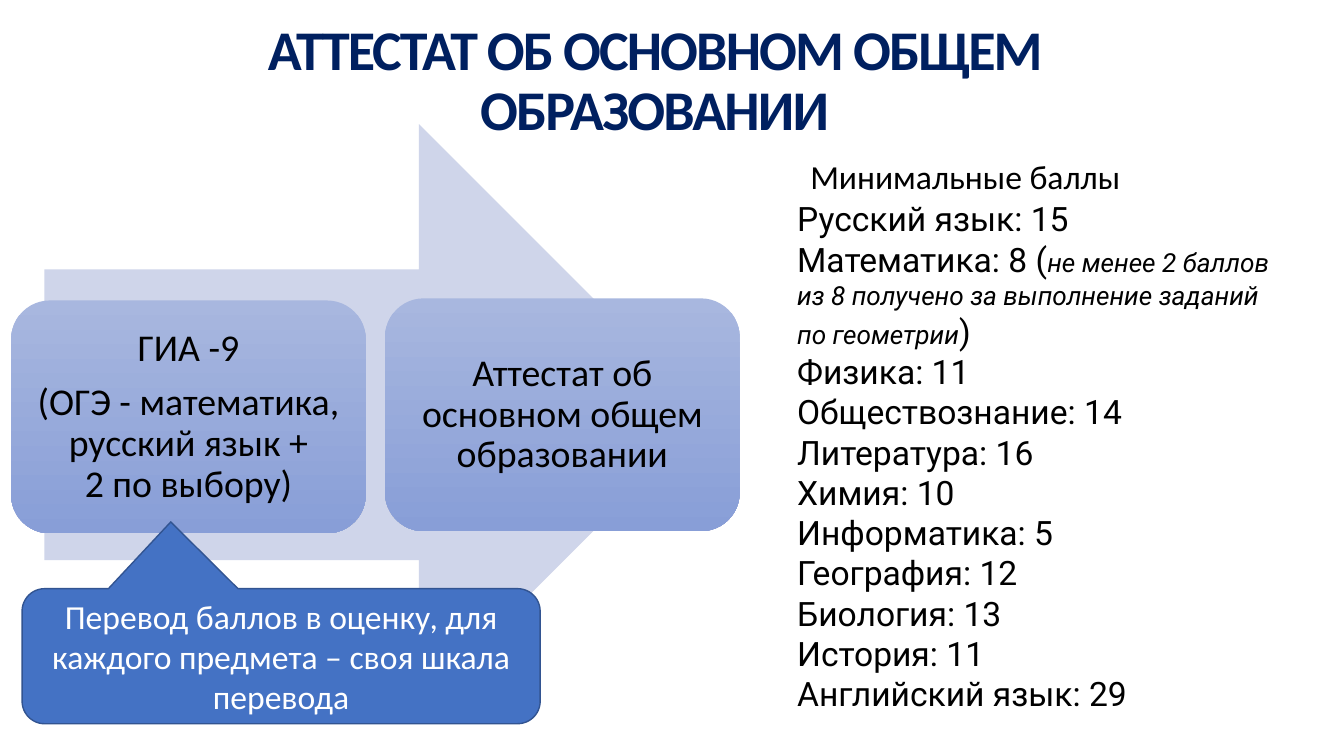
from dataclasses import dataclass

from pptx import Presentation
from pptx.dml.color import RGBColor
from pptx.enum.shapes import MSO_SHAPE
from pptx.enum.text import MSO_ANCHOR, PP_ALIGN
from pptx.shapes.autoshape import Shape
from pptx.slide import Slide
from pptx.text.text import TextFrame, _Paragraph
from pptx.util import Pt

NAVY, BLACK, WHITE = "002060", "000000", "FFFFFF"
ARROW_FILL, CALLOUT_FILL, CALLOUT_LINE = "CFD5EA", "4472C4", "325491"
STEP_TOP, STEP_BOTTOM = "A8B7DF", "889ED7"


@dataclass
class Box:
    left: float
    top: float
    width: float
    height: float

    def lengths(self) -> list[Pt]:
        return [Pt(n) for n in (self.left, self.top, self.width, self.height)]


@dataclass
class Step:
    box: Box
    paragraphs: list[str]


@dataclass
class Score:
    subject: str
    points: int
    note: str = ""


STEPS = [
    Step(Box(7.9, 214.6, 253.4, 166.3),
         ["ГИА -9", "(ОГЭ - математика, русский язык +\n2 по выбору)"]),
    Step(Box(275, 213.1, 253.4, 166.3),
         ["Аттестат об основном общем образовании"]),
]
SCORES = [
    Score("Русский язык", 15),
    Score("Математика", 8, "не\u00a0менее 2 баллов из\u00a08 получено "
          "за\u00a0выполнение заданий по\u00a0геометрии"),
    Score("Физика", 11),
    Score("Обществознание", 14),
    Score("Литература", 16),
    Score("Химия", 10),
    Score("Информатика", 5),
    Score("География", 12),
    Score("Биология", 13),
    Score("История", 11),
    Score("Английский язык", 29),
]


def color(value: str) -> RGBColor:
    return RGBColor.from_string(value)


def next_paragraph(frame: TextFrame) -> _Paragraph:
    """Return the empty first paragraph, or append a new one."""
    first = frame.paragraphs[0]
    return frame.add_paragraph() if first.runs else first


def add_text(paragraph: _Paragraph, text: str, *, size: float = 24,
             font: str = "Calibri", fill: str = BLACK, bold: bool = False,
             italic: bool = False, spacing: float = 0) -> None:
    """Append formatted text; a newline becomes a line break."""
    for index, line in enumerate(text.split("\n")):
        if index:
            paragraph.add_line_break()
        run = paragraph.add_run()
        run.text = line
        run.font.name, run.font.size = font, Pt(size)
        run.font.bold, run.font.italic = bold, italic
        run.font.color.rgb = color(fill)
        if spacing:
            run.font._element.set("spc", str(round(spacing * 100)))


def add_text_box(slide: Slide, box: Box, wrap: bool = True) -> TextFrame:
    frame = slide.shapes.add_textbox(*box.lengths()).text_frame
    frame.word_wrap = wrap
    return frame


def add_shape(slide: Slide, kind: MSO_SHAPE, box: Box, fill: str) -> Shape:
    shape = slide.shapes.add_shape(kind, *box.lengths())
    shape.shadow.inherit = False
    shape.fill.solid()
    shape.fill.fore_color.rgb = color(fill)
    shape.line.fill.background()
    shape.text_frame.word_wrap = True
    shape.text_frame.vertical_anchor = MSO_ANCHOR.MIDDLE
    return shape


def add_title(slide: Slide) -> None:
    frame = add_text_box(slide, Box(136, 26, 663, 65.5))
    frame.vertical_anchor = MSO_ANCHOR.MIDDLE
    paragraph = frame.paragraphs[0]
    paragraph.alignment, paragraph.line_spacing = PP_ALIGN.CENTER, 0.9
    add_text(paragraph, "АТТЕСТАТ ОБ ОСНОВНОМ ОБЩЕМ ОБРАЗОВАНИИ",
             size=40, fill=NAVY, bold=True, spacing=-1.3)


def add_step(slide: Slide, step: Step) -> None:
    shape = add_shape(slide, MSO_SHAPE.ROUNDED_RECTANGLE, step.box, STEP_TOP)
    shape.fill.gradient()
    shape.fill.gradient_angle = 270
    for stop, value in zip(shape.fill.gradient_stops, (STEP_TOP, STEP_BOTTOM)):
        stop.color.rgb = color(value)
    frame = shape.text_frame
    frame.margin_left = frame.margin_right = Pt(8)
    frame.margin_top = frame.margin_bottom = Pt(8)
    for text in step.paragraphs:
        paragraph = next_paragraph(frame)
        paragraph.alignment, paragraph.line_spacing = PP_ALIGN.CENTER, 0.9
        paragraph.space_after = Pt(9.5)
        add_text(paragraph, text, size=27)


def add_scores(slide: Slide) -> None:
    frame = add_text_box(slide, Box(562.3, 138.2, 368.6, 378.7))
    for score in SCORES:
        paragraph = next_paragraph(frame)
        label = f"{score.subject}: {score.points}"
        if score.note:
            add_text(paragraph, f"{label} (", font="Roboto")
            add_text(paragraph, score.note, size=18.7, font="Roboto", italic=True)
            add_text(paragraph, ")", font="Roboto")
        else:
            add_text(paragraph, label, font="Roboto")
    heading = add_text_box(slide, Box(571.7, 108, 238.3, 36), wrap=False)
    add_text(heading.paragraphs[0], "Минимальные баллы")


def add_callout(slide: Slide) -> None:
    shape = add_shape(slide, MSO_SHAPE.ROUNDED_RECTANGULAR_CALLOUT,
                      Box(15.8, 420.5, 370.1, 96.5), CALLOUT_FILL)
    for index, value in enumerate((-0.213, -0.994, 0.167)):
        shape.adjustments[index] = value
    shape.line.color.rgb = color(CALLOUT_LINE)
    shape.line.width = Pt(1)
    paragraph = shape.text_frame.paragraphs[0]
    paragraph.alignment = PP_ALIGN.CENTER
    add_text(paragraph, "Перевод баллов в оценку, для каждого предмета – "
             "своя шкала перевода", fill=WHITE)


def main() -> None:
    presentation = Presentation()
    presentation.slide_width, presentation.slide_height = Pt(960), Pt(540)
    slide = presentation.slides.add_slide(presentation.slide_layouts[6])
    add_title(slide)
    add_shape(slide, MSO_SHAPE.RIGHT_ARROW, Box(31.7, 88.6, 475.2, 415.4), ARROW_FILL)
    for step in STEPS:
        add_step(slide, step)
    add_scores(slide)
    add_callout(slide)
    presentation.save("out.pptx")


if __name__ == "__main__":
    main()
